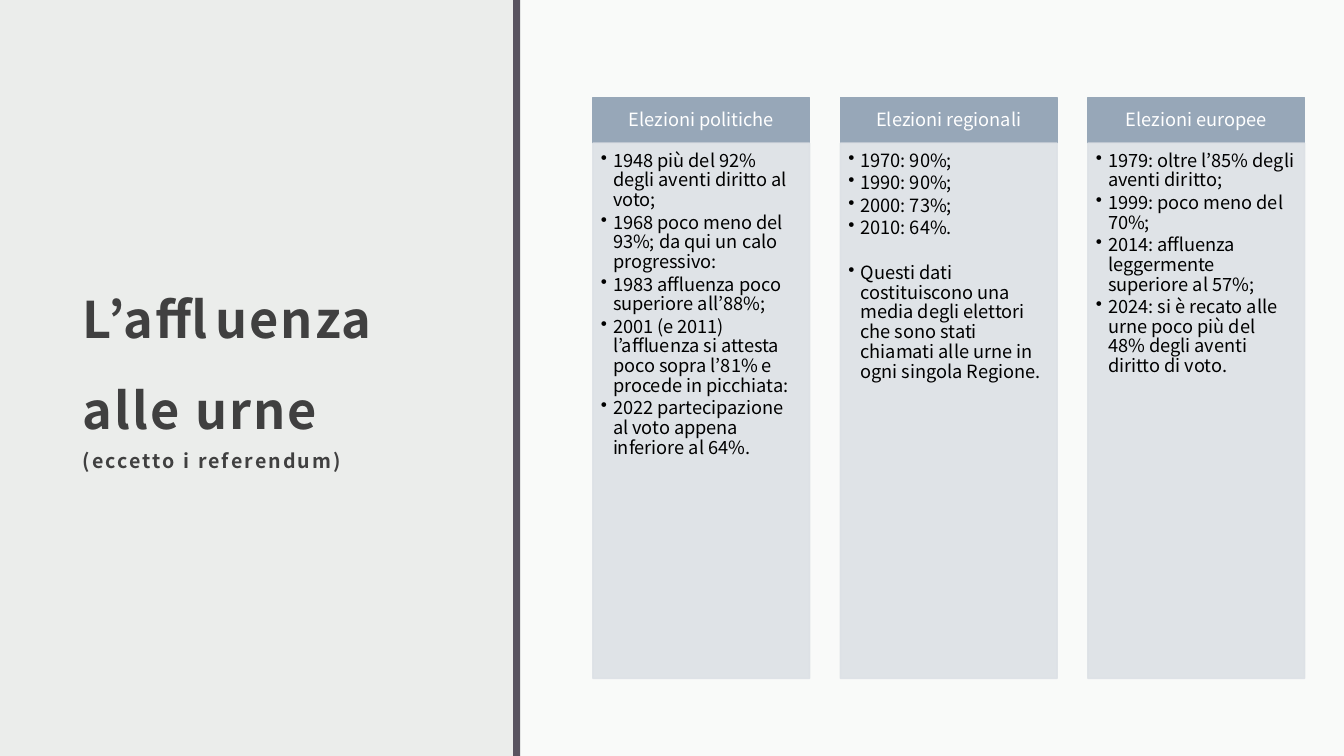
from lxml import etree
from pptx import Presentation
from pptx.dml.color import RGBColor
from pptx.enum.shapes import MSO_SHAPE as Shape
from pptx.enum.text import MSO_ANCHOR as Anchor, PP_ALIGN as Align
from pptx.oxml.ns import qn
from pptx.util import Inches, Pt

FONT = "Noto Sans CJK JP"
BACKGROUND = RGBColor(0xEB, 0xED, 0xEB)
WHITE = RGBColor(0xFF, 0xFF, 0xFF)
BLACK = RGBColor(0, 0, 0)
DIVIDER = RGBColor(0x59, 0x54, 0x60)
TITLE_GRAY = RGBColor(0x40, 0x40, 0x40)
HEADER_BLUE = RGBColor(0x97, 0xA7, 0xB8)
BODY_BLUE = RGBColor(0xDD, 0xE1, 0xE6)

COLUMNS = [
    ("Elezioni politiche", [
        "1948 più del 92% degli aventi diritto al voto;",
        "1968 poco meno del 93%; da qui un calo progressivo:",
        "1983 affluenza poco superiore all’88%;",
        "2001 (e 2011) l’affluenza si attesta poco sopra l’81% e procede in picchiata:",
        "2022 partecipazione al voto appena inferiore al 64%.",
    ], None),
    ("Elezioni regionali", [
        "1970: 90%;",
        "1990: 90%;",
        "2000: 73%;",
        "2010: 64%.",
    ], "Questi dati costituiscono una media degli elettori che sono stati "
       "chiamati alle urne in ogni singola Regione."),
    ("Elezioni europee", [
        "1979: oltre l’85% degli aventi diritto;",
        "1999: poco meno del 70%;",
        "2014: affluenza leggermente superiore al 57%;",
        "2024: si è recato alle urne poco più del 48% degli aventi diritto di voto.",
    ], None),
]


def set_all(target, values):
    for name, value in values.items():
        setattr(target, name, value)


def add_rectangle(slide, box, color, opacity=100, outlined=False):
    shape = slide.shapes.add_shape(Shape.RECTANGLE, *map(Inches, box))
    shape.shadow.inherit = False
    shape.fill.solid()
    shape.fill.fore_color.rgb = color
    if outlined:
        shape.line.color.rgb = color
        shape.line.width = Pt(1)
    else:
        shape.line.fill.background()
    if opacity < 100:
        for element in shape._element.spPr.iter(qn("a:srgbClr")):
            etree.SubElement(element, qn("a:alpha"), val=str(opacity * 1000))
    return shape


def set_frame(frame, margins, anchor):
    """Wrap the text and set its left, top, right and bottom margins."""
    sides = ("margin_left", "margin_top", "margin_right", "margin_bottom")
    set_all(frame, dict(zip(sides, map(Inches, margins))))
    set_all(frame, {"word_wrap": True, "vertical_anchor": anchor})


def write_lines(frame, lines, color, size=13, bold=False, **paragraph_format):
    """Fill the frame with one paragraph per line and return the paragraphs."""
    paragraphs = []
    for index, text in enumerate(lines):
        paragraph = frame.add_paragraph() if index else frame.paragraphs[0]
        set_all(paragraph, {"alignment": Align.LEFT, "line_spacing": Pt(14.1),
                            **paragraph_format})
        run = paragraph.add_run()
        run.text = text
        set_all(run.font, {"name": FONT, "size": Pt(size), "bold": bold})
        run.font.color.rgb = color
        paragraphs.append(paragraph)
    return paragraphs


def add_bullet(paragraph):
    properties = paragraph._p.get_or_add_pPr()
    properties.set("marL", str(Inches(0.12)))
    properties.set("indent", str(Inches(-0.12)))
    etree.SubElement(properties, qn("a:buChar"), char="•")


def add_backdrop(slide, divider_left, divider_width):
    background = slide.background.fill
    background.solid()
    background.fore_color.rgb = BACKGROUND
    panel_left = divider_left + divider_width
    add_rectangle(slide, (panel_left, 0, 13.33 - panel_left, 7.5), WHITE, opacity=75)
    add_rectangle(slide, (divider_left, 0, divider_width, 7.5), DIVIDER)


def add_title(slide, box):
    frame = slide.shapes.add_textbox(*map(Inches, box)).text_frame
    set_frame(frame, (0.12, 0.12, 0.12, 0.1), Anchor.MIDDLE)
    heading, note = write_lines(
        frame, ["L’affluenza alle urne", "(eccetto i referendum)"],
        TITLE_GRAY, bold=True)
    for paragraph, size, spacing in ((heading, 36, 65), (note, 14, 24)):
        paragraph.line_spacing = Pt(spacing)
        run = paragraph.runs[0]
        run.font.size = Pt(size)
        run.font._element.set("spc", "150")


def add_column(slide, box, heading, items, remark):
    left, top, width, height = box
    header_height = 0.45
    header = add_rectangle(slide, (left, top, width, header_height),
                           HEADER_BLUE, outlined=True)
    set_frame(header.text_frame, (0.1, 0.06, 0.1, 0.06), Anchor.MIDDLE)
    write_lines(header.text_frame, [heading], WHITE, alignment=Align.CENTER)

    body_box = (left, top + header_height, width, height - header_height)
    body = add_rectangle(slide, body_box, BODY_BLUE, opacity=90, outlined=True)
    set_frame(body.text_frame, (0.08, 0.08, 0.1, 0.11), Anchor.TOP)
    lines = items + [remark] if remark else items
    paragraphs = write_lines(body.text_frame, lines, BLACK, space_after=Pt(1.95))
    if remark:
        paragraphs[-1].space_before = Pt(16)
    for paragraph in paragraphs:
        add_bullet(paragraph)


def add_columns(slide, box):
    left, top, width, height = box
    column_width = 2.15
    step = (width - column_width) / (len(COLUMNS) - 1)
    for index, column in enumerate(COLUMNS):
        add_column(slide, (left + index * step, top, column_width, height), *column)


def main():
    presentation = Presentation()
    set_all(presentation, {"slide_width": Inches(13.33), "slide_height": Inches(7.5)})
    slide = presentation.slides.add_slide(presentation.slide_layouts[6])
    add_backdrop(slide, 5.09, 0.07)
    add_title(slide, (0.7, 0.77, 3.73, 5.68))
    add_columns(slide, (5.88, 0.97, 7.06, 5.76))
    presentation.save("out.pptx")


if __name__ == "__main__":
    main()
